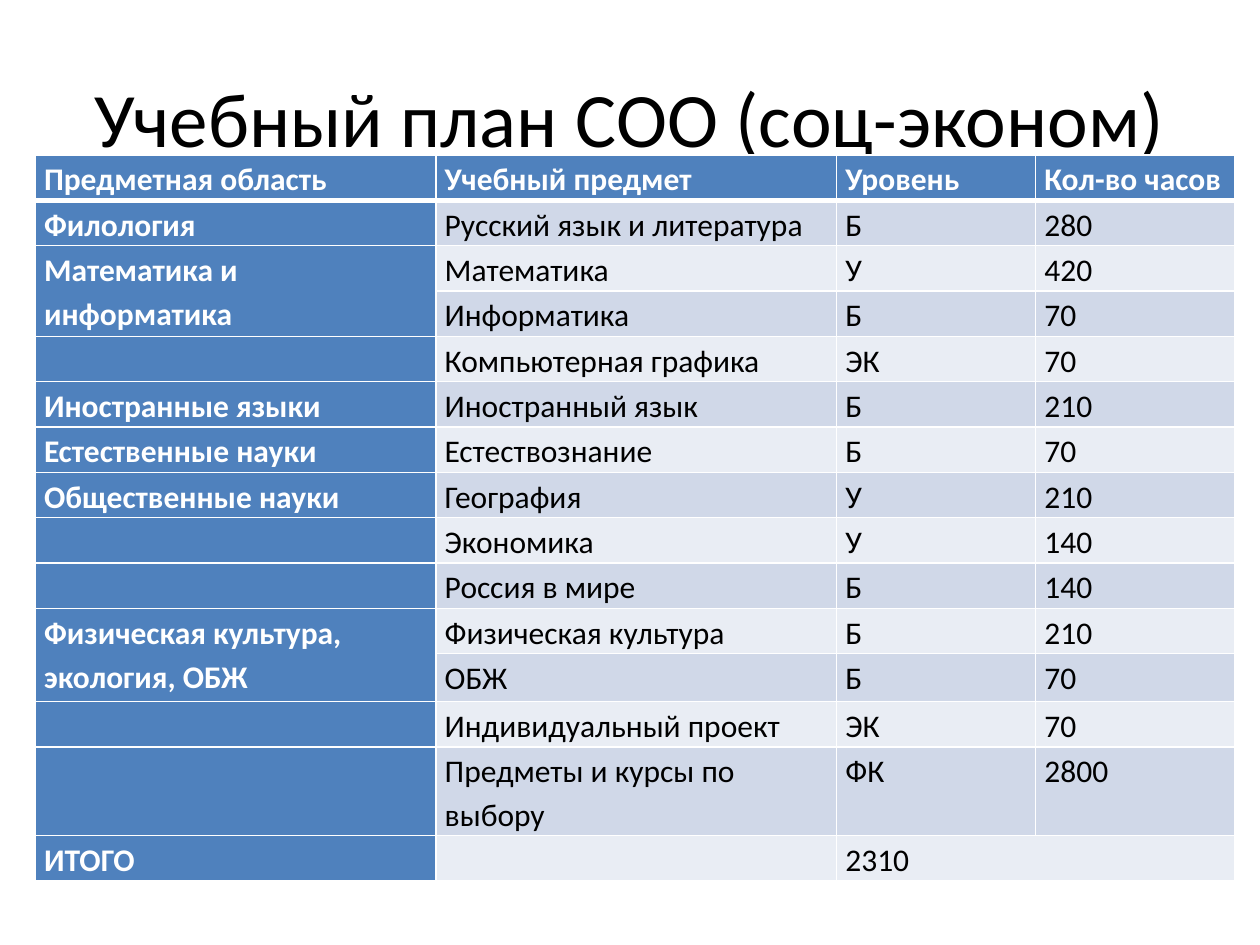
from lxml.etree import SubElement
from pptx import Presentation
from pptx.dml.color import RGBColor
from pptx.enum.text import MSO_ANCHOR, PP_ALIGN
from pptx.oxml.ns import qn
from pptx.util import Inches, Pt

COLORS = {
    "text": "000000",
    "light": "FFFFFF",
    "accent": "4F81BD",
    "odd_row": "D0D8E8",
    "even_row": "E9EDF4",
}
HEADINGS = ("Предметная область", "Учебный предмет", "Уровень", "Кол-во часов")
SUBJECTS = [
    ("Филология", "Русский язык и литература", "Б", "280"),
    ("Математика и информатика", "Математика", "У", "420"),
    ("", "Информатика", "Б", "70"),
    ("", "Компьютерная графика", "ЭК", "70"),
    ("Иностранные языки", "Иностранный язык", "Б", "210"),
    ("Естественные науки", "Естествознание", "Б", "70"),
    ("Общественные науки", "География", "У", "210"),
    ("", "Экономика", "У", "140"),
    ("", "Россия в мире", "Б", "140"),
    ("Физическая культура, экология, ОБЖ", "Физическая культура", "Б", "210"),
    ("", "ОБЖ", "Б", "70"),
    ("", "Индивидуальный проект", "ЭК", "70"),
    ("", "Предметы и курсы по выбору", "ФК", "2800"),
]
TOTAL = ("ИТОГО", "", "2310", "")
COLUMN_WIDTHS = (3.18, 3.18, 1.58, 1.58)


def write(frame, text, size=18, color="text", bold=False, align=PP_ALIGN.LEFT, spacing=None):
    paragraph = frame.paragraphs[0]
    paragraph.alignment = align
    paragraph.line_spacing = spacing
    run = paragraph.add_run()
    run.text = text
    run.font.name = "Calibri"
    run.font.size = Pt(size)
    run.font.bold = bold
    run.font.color.rgb = RGBColor.from_string(COLORS[color])


def add_borders(cell, top=1, bottom=1):
    properties = cell._tc.get_or_add_tcPr()
    sides = {"a:lnL": 1, "a:lnR": 1, "a:lnT": top, "a:lnB": bottom}
    for position, (side, width) in enumerate(sides.items()):
        line = SubElement(properties, qn(side), w=str(Pt(width)))
        fill = SubElement(line, qn("a:solidFill"))
        SubElement(fill, qn("a:srgbClr"), val=COLORS["light"])
        properties.insert(position, line)


prs = Presentation()
prs.slide_width, prs.slide_height = Inches(10), Inches(7.5)
slide = prs.slides.add_slide(prs.slide_layouts[5])

title = slide.shapes.title
title.left, title.top = Inches(0.5), Inches(0.3)
title.width, title.height = Inches(9), Inches(1.25)
title.text_frame.vertical_anchor = MSO_ANCHOR.MIDDLE
write(title.text_frame, "Учебный план СОО (соц-эконом)", size=44, align=PP_ALIGN.CENTER)

plan_rows = [HEADINGS, *SUBJECTS, TOTAL]
plan = slide.shapes.add_table(
    len(plan_rows), len(HEADINGS), Inches(0.28), Inches(1.23), Inches(9.53), Inches(5.42)
).table
for column, width in zip(plan.columns, COLUMN_WIDTHS):
    column.width = Inches(width)

for r, values in enumerate(plan_rows):
    plan.rows[r].height = Inches(0.38 if r == 11 else 0.36)
    for c, value in enumerate(values):
        cell = plan.cell(r, c)
        accented = r == 0 or c == 0
        band = "odd_row" if r % 2 else "even_row"
        cell.fill.solid()
        cell.fill.fore_color.rgb = RGBColor.from_string(COLORS["accent" if accented else band])
        cell.margin_left = cell.margin_right = Inches(0.07)
        cell.margin_top = cell.margin_bottom = 0
        add_borders(cell, top=3 if r == 1 else 1, bottom=3 if r == 0 else 1)
        if value:
            write(cell.text_frame, value, color="light" if accented else "text",
                  bold=accented, spacing=1.15)

for first_row in (2, 10):
    plan.cell(first_row, 0).merge(plan.cell(first_row + 1, 0))
plan.cell(14, 2).merge(plan.cell(14, 3))

prs.save("out.pptx")
